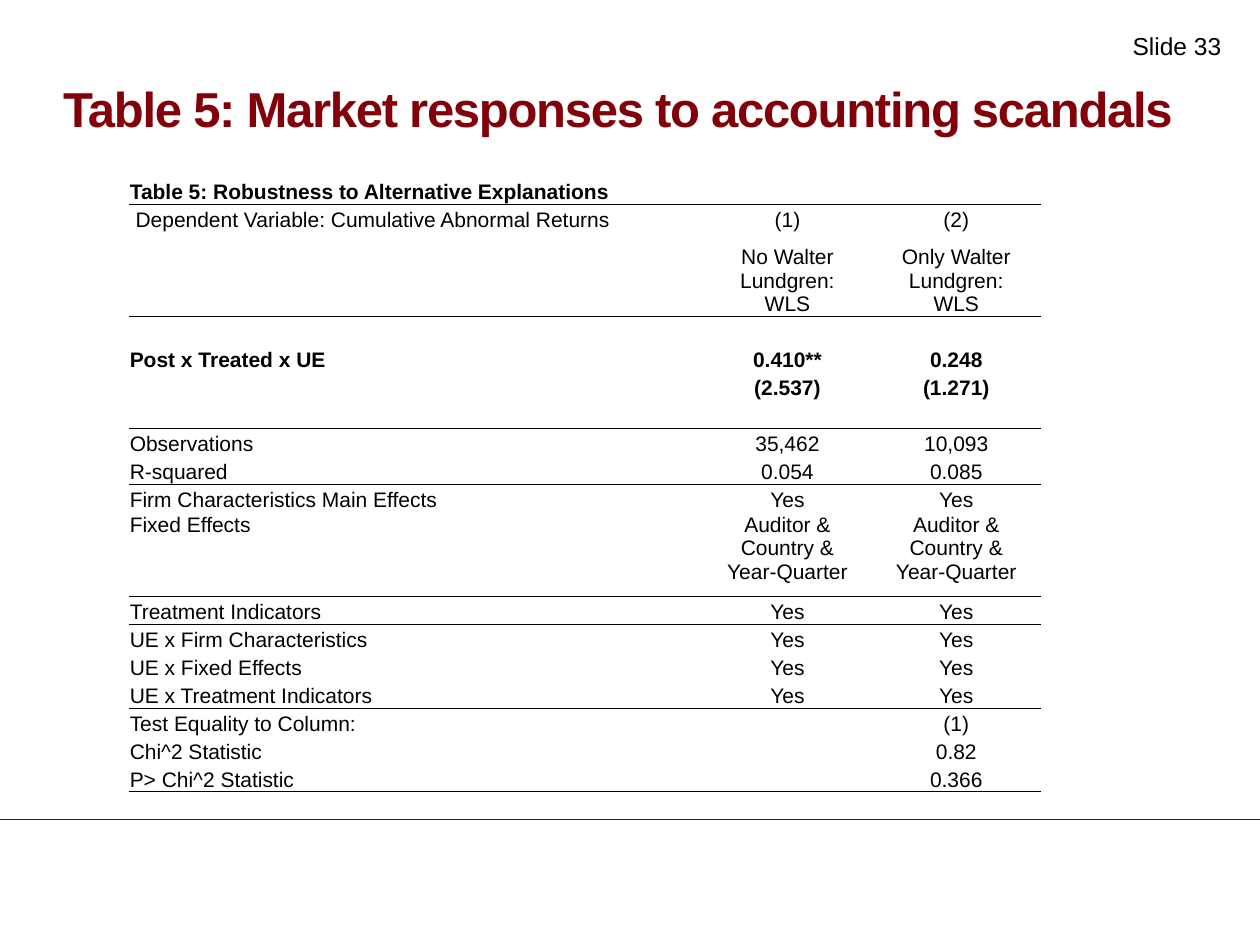
"""Build the slide with the regression table on market responses."""
from dataclasses import dataclass

from lxml import etree
from pptx import Presentation, util as u
from pptx.dml.color import RGBColor
from pptx.enum import shapes, text
from pptx.oxml.ns import qn


@dataclass(frozen=True)
class Theme:
    font: str = "Arial"
    ink: str = "000000"
    title: str = "820009"
    footer: str = "6E0000"
    title_size: float = 28
    number_size: float = 14
    table_size: float = 12
    rule_width: float = 0.5
    footer_width: float = 0.25


@dataclass(frozen=True)
class Row:
    label: str = ""
    first: str = ""
    second: str = ""
    units: int = 1
    rule_above: bool = False
    bold: bool = False
    anchor: text.MSO_ANCHOR = text.MSO_ANCHOR.BOTTOM


THEME = Theme()
WIDTH, HEIGHT = u.Inches(10), u.Inches(7.5)
TABLE_LEFT, TABLE_TOP = u.Inches(1.02), u.Inches(1.34)
COLUMN_WIDTHS = [u.Inches(width) for width in (4.56, 1.34, 1.34)]
HEADING_HEIGHT, BODY_HEIGHT = u.Inches(0.28), u.Inches(4.67)
EFFECTS = "Auditor &\nCountry &\nYear-Quarter"
ROWS = [
    Row("Table 5: Robustness to Alternative Explanations", bold=True),
    Row(" Dependent Variable: Cumulative Abnormal Returns", "(1)", "(2)", rule_above=True),
    Row("", "No Walter Lundgren:\nWLS", "Only Walter Lundgren:\nWLS", units=3),
    Row(rule_above=True),
    Row("Post x Treated x UE", "0.410**", "0.248", bold=True),
    Row("", "(2.537)", "(1.271)", bold=True),
    Row(),
    Row("Observations", "35,462", "10,093", rule_above=True),
    Row("R-squared", "0.054", "0.085"),
    Row("Firm Characteristics Main Effects", "Yes", "Yes", rule_above=True),
    Row("Fixed Effects", EFFECTS, EFFECTS, units=3, anchor=text.MSO_ANCHOR.TOP),
    Row("Treatment Indicators", "Yes", "Yes", rule_above=True),
    Row("UE x Firm Characteristics", "Yes", "Yes", rule_above=True),
    Row("UE x Fixed Effects", "Yes", "Yes"),
    Row("UE x Treatment Indicators", "Yes", "Yes"),
    Row("Test Equality to Column:", "", "(1)", rule_above=True),
    Row("Chi^2 Statistic", "", "0.82"),
    Row("P> Chi^2 Statistic", "", "0.366"),
]


def format_run(run, size: float, color: str, bold: bool = False) -> None:
    """Set the typeface, size, colour and weight of a run."""
    run.font.name = THEME.font
    run.font.size = u.Pt(size)
    run.font.bold = bold
    run.font.color.rgb = RGBColor.from_string(color)


def set_border(cell, side: str, visible: bool) -> None:
    """Draw or clear one side of a cell."""
    line = etree.SubElement(cell._tc.get_or_add_tcPr(), qn(f"a:ln{side}"))
    if visible:
        line.set("w", str(u.Pt(THEME.rule_width)))
        fill = etree.SubElement(line, qn("a:solidFill"))
        etree.SubElement(fill, qn("a:srgbClr"), val=THEME.ink)
    else:
        etree.SubElement(line, qn("a:noFill"))


def fill_cell(cell, words: str, row: Row, centred: bool, rule_below: bool) -> None:
    """Write and format one table cell."""
    cell.text_frame.text = words
    cell.vertical_anchor = row.anchor
    cell.margin_left = cell.margin_right = cell.margin_top = u.Inches(0.01)
    cell.margin_bottom = 0
    for paragraph in cell.text_frame.paragraphs:
        paragraph.alignment = text.PP_ALIGN.CENTER if centred else text.PP_ALIGN.LEFT
        for run in paragraph.runs:
            format_run(run, THEME.table_size, THEME.ink, row.bold)
        if not paragraph.runs:
            etree.SubElement(paragraph._p, qn("a:endParaRPr"), sz=str(int(THEME.table_size * 100)))
    for side, visible in (("L", False), ("R", False), ("T", row.rule_above), ("B", rule_below)):
        set_border(cell, side, visible)
    cell.fill.background()


def add_results(slide) -> None:
    """Add the regression table, its rows sized in equal units."""
    frame = slide.shapes.add_table(len(ROWS), len(COLUMN_WIDTHS), TABLE_LEFT, TABLE_TOP,
                                   sum(COLUMN_WIDTHS), HEADING_HEIGHT + BODY_HEIGHT)
    table = frame.table
    table.first_row = table.horz_banding = False
    for column, width in zip(table.columns, COLUMN_WIDTHS):
        column.width = width
    unit = BODY_HEIGHT / sum(row.units for row in ROWS[1:])
    for index, row in enumerate(ROWS):
        table.rows[index].height = int(unit * row.units) if index else HEADING_HEIGHT
        rule_below = index + 1 == len(ROWS) or ROWS[index + 1].rule_above
        for column, words in enumerate((row.label, row.first, row.second)):
            fill_cell(table.cell(index, column), words, row, column > 0, rule_below)


def add_title(slide, words: str) -> None:
    """Place and format the title placeholder."""
    title = slide.shapes.title
    title.left, title.top = int(WIDTH * 0.05), u.Inches(0.29)
    title.width, title.height = int(WIDTH * 0.9), u.Inches(0.81)
    frame = title.text_frame
    frame.text = words
    frame.word_wrap = True
    frame.auto_size = text.MSO_AUTO_SIZE.NONE
    frame.vertical_anchor = text.MSO_ANCHOR.BOTTOM
    frame.margin_left = frame.margin_right = frame.margin_top = frame.margin_bottom = 0
    paragraph = frame.paragraphs[0]
    paragraph.alignment = text.PP_ALIGN.LEFT
    paragraph.line_spacing = 0.9
    run = paragraph.runs[0]
    format_run(run, THEME.title_size, THEME.title, bold=True)
    run._r.get_or_add_rPr().set("spc", "-70")


def add_slide_number(slide, words: str) -> None:
    """Add the slide number in the top right corner."""
    box = slide.shapes.add_textbox(u.Inches(8.89), u.Inches(0.2), u.Inches(1.11), u.Inches(0.52))
    box.text_frame.word_wrap = True
    box.text_frame.text = words
    format_run(box.text_frame.paragraphs[0].runs[0], THEME.number_size, THEME.ink)


def add_footer_line(slide) -> None:
    """Add the thin line across the foot of the slide."""
    height = u.Inches(6.5)
    line = slide.shapes.add_connector(shapes.MSO_CONNECTOR.STRAIGHT, 0, height, WIDTH, height)
    line.line.color.rgb = RGBColor.from_string(THEME.footer)
    line.line.width = u.Pt(THEME.footer_width)
    etree.SubElement(line._element.spPr, qn("a:effectLst"))


def main() -> None:
    """Build and save the presentation."""
    presentation = Presentation()
    presentation.slide_width, presentation.slide_height = WIDTH, HEIGHT
    slide = presentation.slides.add_slide(presentation.slide_layouts[5])
    add_footer_line(slide)
    add_slide_number(slide, "Slide 33")
    add_title(slide, "Table 5: Market responses to accounting scandals")
    add_results(slide)
    presentation.save("out.pptx")


if __name__ == "__main__":
    main()
